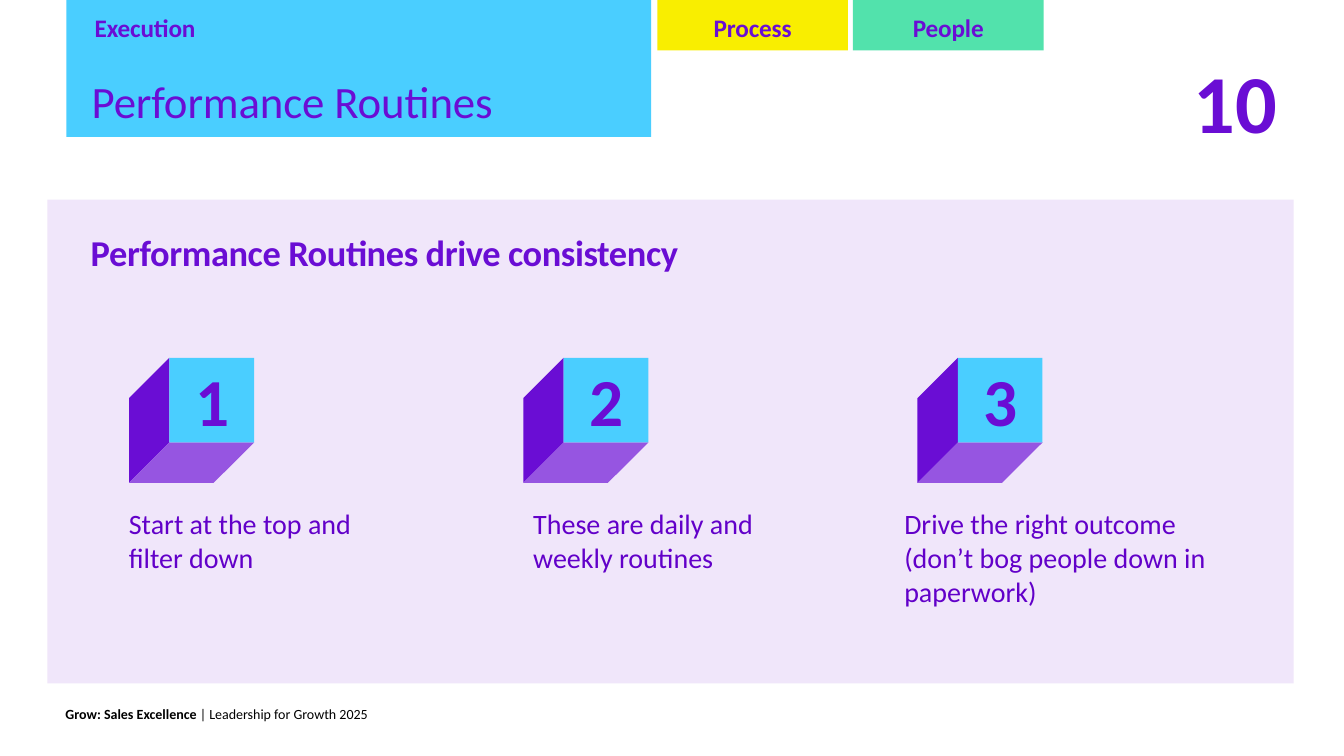
from pptx import Presentation, util as u
from pptx.dml.color import RGBColor
from pptx.enum import shapes, text

COLORS = {
    "violet": "6A0DD4", "caption": "6200C9", "lilac": "9655E1", "panel": "F0E6FA",
    "sky": "4ACEFF", "yellow": "F9EE00", "green": "52E2AC", "black": "000000",
}
HEADING = "Performance Routines drive consistency"
BANNER = [
    ("Execution", dict(size=18, bold=True, indent=0.28)),
    ("Performance Routines", dict(size=32, indent=0.25, before=22.6)),
]
TABS = [("Process", "yellow"), ("People", "green")]
PAGE = "10"
FOOTER = [("Grow: Sales Excellence ", True), ("| Leadership for Growth 2025", False)]
ROUTINES = [
    ("Start at the top and filter down", (1.18, 4.98, 2.66, 0.77)),
    ("These are daily and weekly routines", (5.19, 4.98, 2.5, 1.11)),
    ("Drive the right outcome (don’t bog people down in paperwork)", (8.87, 4.98, 3.59, 1.11)),
]
TAB_LEFT, TAB_WIDTH, TAB_STEP, TAB_HEIGHT = 6.52, 1.89, 1.94, 0.5
CUBE_LEFT, CUBE_TOP, CUBE_STEP = 1.28, 3.55, 3.91
FACE, DEPTH = 0.84, 0.4
NUMBER_WIDTH, NUMBER_HEIGHT = 0.92, 0.82

deck = Presentation()
deck.slide_width, deck.slide_height = u.Inches(13.33), u.Inches(7.5)
slide = deck.slides.add_slide(deck.slide_layouts[5])


def inches(values):
    return [u.Inches(value) for value in values]


def paint(part, color):
    part.shadow.inherit = False
    part.fill.solid()
    part.fill.fore_color.rgb = RGBColor.from_string(COLORS[color])
    part.line.fill.background()
    return part


def block(parent, box, color):
    return paint(parent.add_shape(shapes.MSO_SHAPE.RECTANGLE, *inches(box)), color)


def facet(parent, points, color):
    corners = [inches(point) for point in points]
    outline = parent.build_freeform(*corners[0], scale=1.0)
    outline.add_line_segments(corners[1:], close=True)
    return paint(outline.convert_to_shape(), color)


def frame(part, insets=(0, 0.01, 0, 0), anchor=text.MSO_ANCHOR.TOP):
    body = part.text_frame
    left, top, right, bottom = inches(insets)
    settings = dict(word_wrap=True, auto_size=text.MSO_AUTO_SIZE.NONE, vertical_anchor=anchor,
                    margin_left=left, margin_top=top, margin_right=right, margin_bottom=bottom)
    for name, value in settings.items():
        setattr(body, name, value)
    return body


def textbox(box, **settings):
    return frame(slide.shapes.add_textbox(*inches(box)), **settings)


def write(paragraph, words, size, bold=False, color="violet", spacing=-0.1,
          indent=0, before=0, align=text.PP_ALIGN.LEFT):
    paragraph.alignment = align
    if indent:
        paragraph._p.get_or_add_pPr().set("marL", str(u.Inches(indent)))
    if before:
        paragraph.space_before = u.Pt(before)
    run = paragraph.add_run()
    run.text = words
    for name, value in dict(name="Calibri", size=u.Pt(size), bold=bold).items():
        setattr(run.font, name, value)
    run.font.color.rgb = RGBColor.from_string(COLORS[color])
    if spacing:
        run._r.get_or_add_rPr().set("spc", str(round(spacing * 100)))


block(slide.shapes, (0.47, 1.98, 12.36, 4.8), "panel")

page = textbox((11.83, 0.5, 0.92, 1))
write(page.paragraphs[0], PAGE, 58.8, bold=True, indent=0.01)

banner = frame(block(slide.shapes, (0.66, 0, 5.8, 1.36), "sky"), insets=(0, 0.12, 0, 0.08))
for index, (words, style) in enumerate(BANNER):
    write(banner.add_paragraph() if index else banner.paragraphs[0], words, **style)

for index, (words, color) in enumerate(TABS):
    tab = block(slide.shapes, (TAB_LEFT + index * TAB_STEP, 0, TAB_WIDTH, TAB_HEIGHT), color)
    label = frame(tab, insets=(0, 0.12, 0, 0.08))
    write(label.paragraphs[0], words, 18, bold=True, align=text.PP_ALIGN.CENTER)

footer = textbox((0.65, 7, 4.27, 0.17), insets=(0, 0, 0, 0), anchor=text.MSO_ANCHOR.MIDDLE)
for words, bold in FOOTER:
    write(footer.paragraphs[0], words, 10, bold=bold, color="black", spacing=0)

for index, (words, caption_box) in enumerate(ROUTINES):
    left = CUBE_LEFT + index * CUBE_STEP
    inner, right = left + DEPTH, left + DEPTH + FACE
    low, bottom = CUBE_TOP + FACE, CUBE_TOP + FACE + DEPTH
    cube = slide.shapes.add_group_shape().shapes
    facet(cube, [(inner, CUBE_TOP), (left, CUBE_TOP + DEPTH), (left, bottom), (inner, low)], "violet")
    facet(cube, [(right, low), (inner, low), (left, bottom), (left + FACE, bottom)], "lilac")
    block(cube, (inner, CUBE_TOP, FACE, FACE), "sky")

    number_left = inner + (FACE - NUMBER_WIDTH) / 2
    number = textbox((number_left, CUBE_TOP, NUMBER_WIDTH, NUMBER_HEIGHT))
    write(number.paragraphs[0], str(index + 1), 48, bold=True, indent=0.01,
          align=text.PP_ALIGN.CENTER)
    caption = textbox(caption_box, insets=(0.1, 0.05, 0.1, 0.05))
    write(caption.paragraphs[0], words, 20, color="caption", spacing=0)

heading = slide.shapes.title
heading.left, heading.top, heading.width, heading.height = inches((0.89, 2.27, 9.83, 0.45))
write(frame(heading).paragraphs[0], HEADING, 26, bold=True, spacing=-0.3, indent=0.01)
heading.element.getparent().append(heading.element)

deck.save("out.pptx")
